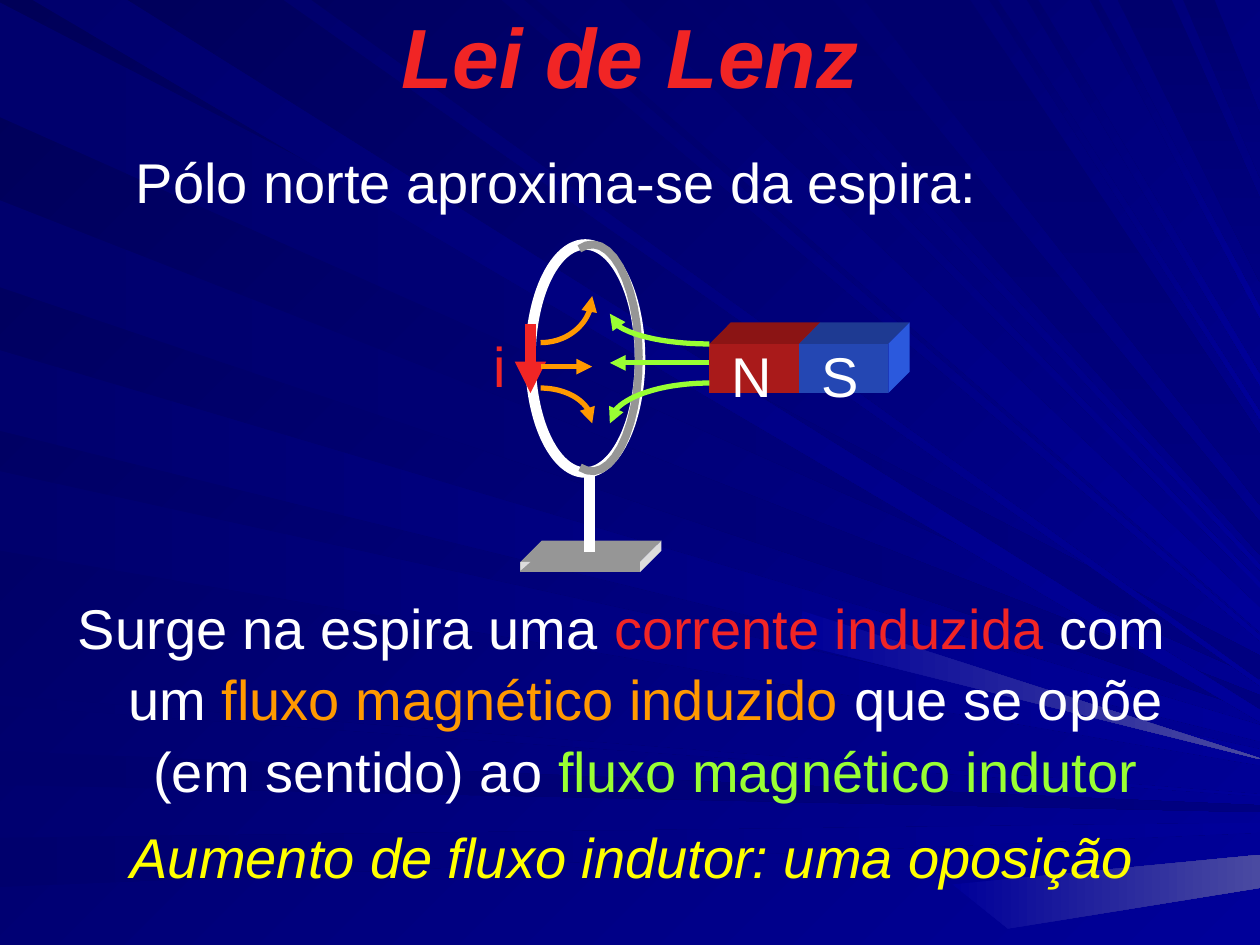
import math
from dataclasses import dataclass

import pptx
import pptx.dml.color
import pptx.enum.shapes
import pptx.enum.text
import pptx.oxml.ns
import pptx.util
from lxml import etree


@dataclass(frozen=True)
class Theme:
    font: str = "Arial"
    head: int = 48
    body: int = 32
    white: str = "FFFFFF"
    red: str = "F12525"
    green: str = "99FF33"
    amber: str = "FF9900"
    yellow: str = "FFFF00"
    gray: str = "969696"
    dark: str = "000058"
    dusk: str = "00006D"
    deep: str = "000080"
    blue: str = "000099"
    glow: str = "4A4AA1"
    north: tuple = ("A91A1A", "8B1414", "A91A1A")
    south: tuple = ("2447B3", "1E3A92", "2B59DD")
    stand: tuple = ("969696", "969696", "DCDCDC")


THEME = Theme()
ALIGN = pptx.enum.text.PP_ALIGN
SHAPE = pptx.enum.shapes.MSO_SHAPE
WIDE, HIGH = 10, 7.5

# Where each ray starts and stops on its edge, and the colour it fades to
LEFT = [(.02, .93, THEME.deep), (5.96, 6.23, THEME.deep), (6.65, 7.04, THEME.blue),
        (1.59, 2.28, THEME.deep), (2.78, 3.42, THEME.blue),
        (3.74, 4.37, THEME.blue), (5.52, 5.6, THEME.blue)]
TOP = [(.26, 1.01, THEME.blue), (2.25, 2.47, THEME.blue), (3.98, 4.16, THEME.blue),
       (4.26, 4.92, THEME.blue), (5.4, 5.52, THEME.blue), (5.77, 5.88, THEME.blue),
       (6.06, 6.61, THEME.deep), (6.86, 7.7, THEME.deep), (7.85, 7.92, THEME.blue),
       (8.15, 8.24, THEME.blue), (8.65, 8.72, THEME.blue), (8.87, 9.3, THEME.deep),
       (9.39, 9.64, THEME.deep)]


def dist(inch):
    return pptx.util.Cm(inch * 2.54)


def tint(code):
    return pptx.dml.color.RGBColor.from_string(code)


def blend(fill, first, last, angle):
    """Fill with a two-colour gradient whose angle runs clockwise."""
    fill.gradient()
    fill.gradient_angle = -angle % 360
    for stop, code in zip(fill.gradient_stops, (first, last)):
        stop.color.rgb = tint(code)


def outline(shapes, points, close=True):
    spots = [(dist(x), dist(y)) for x, y in points]
    pen = shapes.build_freeform(*spots[0], scale=1.0)
    pen.add_line_segments(spots[1:], close=close)
    shape = pen.convert_to_shape()
    shape.shadow.inherit = False
    shape.line.fill.background()
    return shape


def face(shapes, points, code):
    shape = outline(shapes, points)
    shape.fill.solid()
    shape.fill.fore_color.rgb = tint(code)


def stroke(shape, code, width, arrow=False):
    shape.line.color.rgb = tint(code)
    shape.line.width = pptx.util.Pt(width)
    if arrow:
        line = shape.line._get_or_add_ln()
        etree.SubElement(line, pptx.oxml.ns.qn("a:tailEnd"), type="triangle")


def straight(shapes, start, end, code, width, arrow=False):
    kind = pptx.enum.shapes.MSO_CONNECTOR.STRAIGHT
    link = shapes.add_connector(kind, *map(dist, start + end))
    stroke(link, code, width, arrow)
    etree.SubElement(link._element.spPr, pptx.oxml.ns.qn("a:effectLst"))


def curve(shapes, mid, radii, angles, code, width, arrow=False):
    """Draw part of an ellipse; a negative radius mirrors it."""
    first, last = map(math.radians, angles)
    steps = 24
    turns = [first + (last - first) * n / steps for n in range(steps + 1)]
    points = [(mid[0] + radii[0] * math.cos(t), mid[1] + radii[1] * math.sin(t))
              for t in turns]
    shape = outline(shapes, points, close=False)
    shape.fill.background()
    stroke(shape, code, width, arrow)


def bend(shapes, start, end, code):
    """Draw a quarter arrow that leaves start level and meets end upright."""
    radii = (end[0] - start[0], start[1] - end[1])
    curve(shapes, (start[0], end[1]), radii, (90, 0), code, 3, True)


def block(shapes, left, top, width, height, codes):
    """Draw a box seen from the upper right: front, top and side."""
    dx, dy = .17, -.17
    right, low = left + width, top + height
    front, lid, side = codes
    face(shapes, [(left, top), (right, top), (right, low), (left, low)], front)
    face(shapes, [(left, top), (left + dx, top + dy),
                  (right + dx, top + dy), (right, top)], lid)
    face(shapes, [(right, top), (right + dx, top + dy),
                  (right + dx, low + dy), (right, low)], side)


def write(shape, box, parts, size=THEME.body, align=ALIGN.LEFT, hang=0,
          bold=False, slant=False, space=1.06):
    """Place a text shape and fill it with (text, colour) parts."""
    shape.left, shape.top, shape.width, shape.height = map(dist, box)
    frame = shape.text_frame
    frame.word_wrap = True
    frame.auto_size = pptx.enum.text.MSO_AUTO_SIZE.NONE
    para = frame.paragraphs[0]
    props = para._p.get_or_add_pPr()
    props.set("marL", str(dist(hang)))
    props.set("indent", str(-dist(hang)))
    etree.SubElement(props, pptx.oxml.ns.qn("a:buNone"))
    para.alignment, para.line_spacing = align, space
    para.space_before = pptx.util.Pt(0)
    for text, code in parts:
        run = para.add_run()
        run.text = text
        font = run.font
        font.name, font.size = THEME.font, pptx.util.Pt(size)
        font.bold, font.italic = bold, slant
        font.color.rgb = tint(code)


def label(shapes, box, parts, **style):
    write(shapes.add_textbox(0, 0, 0, 0), box, parts, **style)


def ray(shapes, start, stop, focus, colours, angle):
    """Draw a beam from two points towards the focus, cut at the right edge."""
    cuts = []
    for x, y in (stop, start):
        part = (WIDE - x) / (focus[0] - x)
        cuts.append((WIDE, y + part * (focus[1] - y)))
    blend(outline(shapes, [start, stop] + cuts).fill, *colours, angle)


def backdrop(slide):
    blend(slide.background.fill, THEME.dark, THEME.blue, 45)
    group = slide.shapes.add_group_shape()
    shapes = group.shapes
    for start, stop, code in LEFT:
        ray(shapes, (0, start), (0, stop), (12.5, 6.5), (THEME.dusk, code), 0)
    for start, stop, code in TOP:
        angle = 90 if code == THEME.deep else 45
        ray(shapes, (start, 0), (stop, 0), (12.5, 7.2), (THEME.dusk, code), angle)
    shine = (THEME.blue, THEME.glow)
    ray(shapes, (6.37, 4.85), (6.33, 5.11), (10.1, 6.05), shine, 0)
    ray(shapes, (7.56, 7.02), (8, 7.37), (14, 6.4), shine, 0)
    slide.shapes._spTree.insert(2, group._element)


def loop(shapes):
    ring = shapes.add_shape(SHAPE.OVAL, *map(dist, (4.21, 1.94, .87, 1.81)))
    ring.shadow.inherit = False
    ring.fill.background()
    stroke(ring, THEME.white, 6)
    block(shapes, 4.13, 4.46, .95, .08, THEME.stand)
    face(shapes, [(4.13, 4.46), (4.21, 4.46), (4.13, 4.53)], THEME.stand[2])
    straight(shapes, (4.68, 4.38), (4.68, 3.75), THEME.white, 6)
    curve(shapes, (4.7, 2.84), (.37, .9), (-106, 105), THEME.gray, 4.5)
    straight(shapes, (4.21, 2.57), (4.21, 3.12), THEME.red, 6, True)


def magnet(shapes):
    poles = [("N", 5.63, THEME.north), ("S", 6.34, THEME.south)]
    for _, left, codes in poles:
        block(shapes, left, 2.73, .71, .39, codes)
    for name, left, _ in poles:
        label(shapes, (left + .08, 2.63, .48, .75), [(name, THEME.white)])


def fields(shapes):
    """Draw three arrows from the magnet and three from the loop."""
    sets = [(5.63, 4.84, (2.73, 2.88, 3.04), (2.49, 3.36), THEME.green),
            (4.29, 4.7, (2.72, 2.91, 3.08), (2.35, 3.36), THEME.amber)]
    for start, end, (top, mid, low), (rise, fall), code in sets:
        bend(shapes, (start, top), (end, rise), code)
        straight(shapes, (start, mid), (end, mid), code, 3, True)
        bend(shapes, (start, low), (end, fall), code)


def main():
    deck = pptx.Presentation()
    deck.slide_width, deck.slide_height = dist(WIDE), dist(HIGH)
    slide = deck.slides.add_slide(deck.slide_layouts[1])
    shapes = slide.shapes
    backdrop(slide)
    write(shapes.title, (.5, -.03, 9, .93), [("Lei de Lenz", THEME.red)],
          size=THEME.head, align=ALIGN.CENTER, bold=True, slant=True, space=1.0)
    write(shapes.placeholders[1], (3.82, 2.55, .48, .75), [("i", THEME.red)])
    loop(shapes)
    magnet(shapes)
    fields(shapes)
    label(shapes, (.98, 1.09, 6.93, .63),
          [("Pólo norte aproxima-se da espira:", THEME.white)])
    label(shapes, (.35, 4.63, 9.17, 1.67),
          [("Surge na espira uma ", THEME.white), ("corrente induzida", THEME.red),
           (" com um ", THEME.white), ("fluxo magnético induzido", THEME.amber),
           (" que se opõe (em sentido) ao ", THEME.white),
           ("fluxo magnético indutor", THEME.green)], align=ALIGN.CENTER, hang=.38)
    label(shapes, (.55, 6.45, 8.94, .84),
          [("Aumento de fluxo indutor: uma oposição", THEME.yellow)],
          align=ALIGN.CENTER, slant=True)
    deck.save("out.pptx")


if __name__ == "__main__":
    main()
